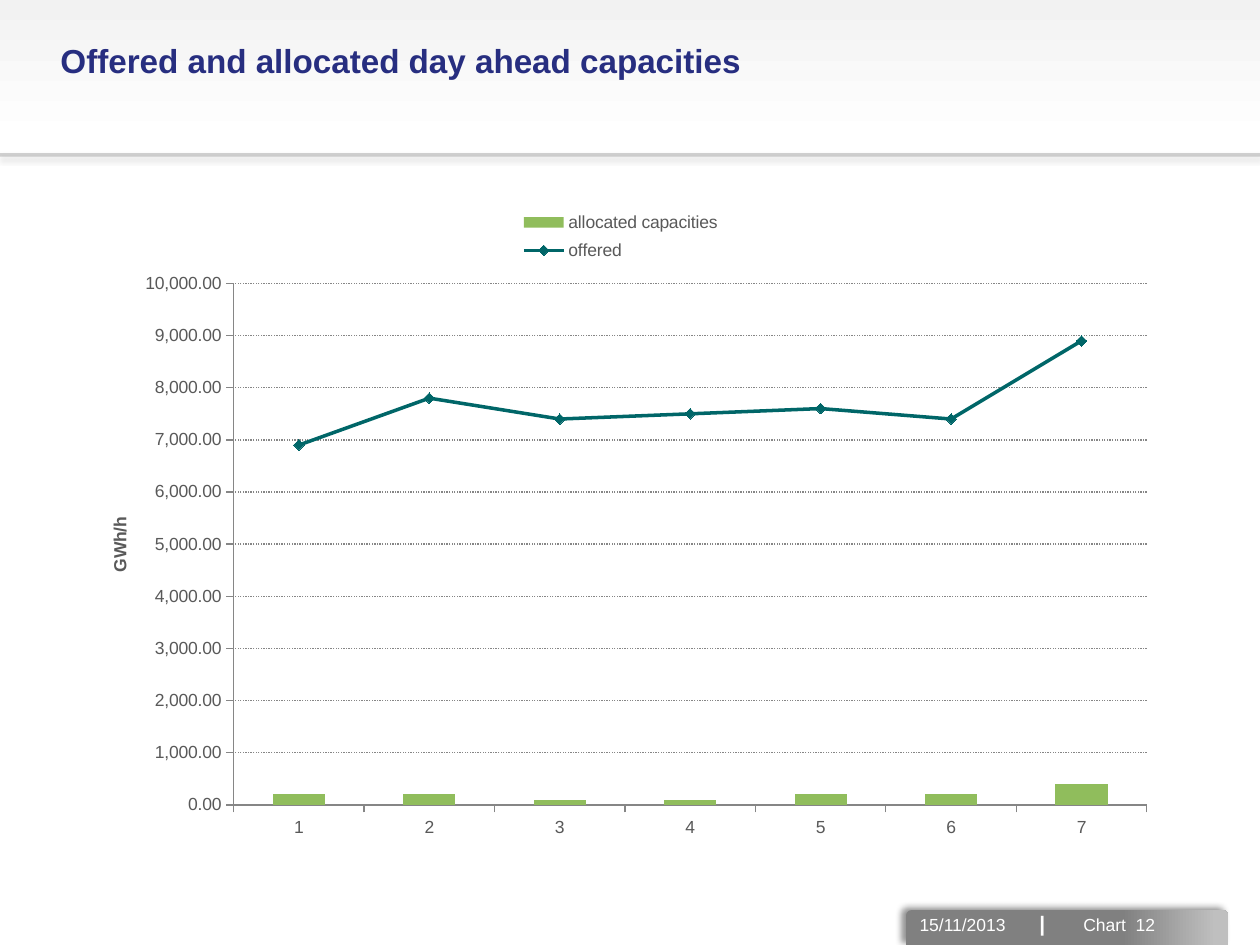
from lxml import etree
from pptx import Presentation
from pptx import util as u
from pptx.chart.data import CategoryChartData
from pptx.dml.color import RGBColor
from pptx.enum import chart as charts, dml, shapes, text
from pptx.oxml import parse_xml
from pptx.oxml.ns import nsdecls, qn

THEME = {
    "font": "Arial", "title": 19, "body": 10, "divider": 12,
    "navy": RGBColor.from_string("272E80"), "white": RGBColor.from_string("FFFFFF"),
    "pale": RGBColor.from_string("F2F2F2"), "grey": RGBColor.from_string("808080"),
    "silver": RGBColor.from_string("BFBFBF"), "text": RGBColor.from_string("595959"),
    "axis": RGBColor.from_string("868686"),
    "green": RGBColor.from_string("90BD5C"), "teal": RGBColor.from_string("006668"),
}


def set_gradient(fill, angle, *stops):
    fill.gradient()
    fill.gradient_angle = angle
    for stop, (position, color) in zip(fill.gradient_stops, stops):
        stop.position = position
        stop.color.rgb = THEME[color]


def add_shadow(shape, alpha, blur, distance, direction):
    properties = shape._element.spPr
    for old in properties.findall(qn("a:effectLst")):
        properties.remove(old)
    properties.append(parse_xml(
        f'<a:effectLst {nsdecls("a")}><a:outerShdw blurRad="{u.Pt(blur)}" dist="{u.Pt(distance)}" '
        f'dir="{direction * 60000}" algn="t" rotWithShape="0"><a:srgbClr val="000000">'
        f'<a:alpha val="{alpha * 1000}"/></a:srgbClr></a:outerShdw></a:effectLst>'))


presentation = Presentation()
presentation.slide_width, presentation.slide_height = u.Inches(10), u.Inches(7.5)
W, H = presentation.slide_width, presentation.slide_height
slide = presentation.slides.add_slide(presentation.slide_layouts[5])
set_gradient(slide.background.fill, 90, (0.85, "white"), (1, "pale"))

# Title
title = slide.shapes.title
title.left, title.top = int(W * 0.038), int(H * 0.036)
title.width, title.height = int(W * 0.801), int(H * 0.117)
title.text_frame.text = "Offered and allocated day ahead capacities"
title.text_frame.vertical_anchor = text.MSO_ANCHOR.TOP
title.text_frame.auto_size = text.MSO_AUTO_SIZE.NONE
paragraph = title.text_frame.paragraphs[0]
paragraph.alignment = text.PP_ALIGN.LEFT
font = paragraph.runs[0].font
font.name, font.size, font.bold = THEME["font"], u.Pt(THEME["title"]), True
font.color.rgb = THEME["navy"]

# Header rule
rule_y = int(H * 0.164)
rule = slide.shapes.add_connector(shapes.MSO_CONNECTOR.STRAIGHT, 0, rule_y, W, rule_y)
rule.line.width = u.Pt(2)
rule.line.color.rgb = THEME["grey"]
rule_color = rule._element.spPr.find(".//" + qn("a:srgbClr"))
etree.SubElement(rule_color, qn("a:alpha")).set("val", "34000")
add_shadow(rule, 35, 3.1, 1.8, 90)

# Footer tab
tab = slide.shapes.add_shape(shapes.MSO_SHAPE.ROUND_2_SAME_RECTANGLE,
                             int(W * 0.719), int(H * 0.963), int(W * 0.256), int(H * 0.037))
set_gradient(tab.fill, 0, (0.67, "grey"), (0.96, "silver"))
tab.line.fill.background()
add_shadow(tab, 43, 4, 3, 211)

# Footer text, spaced by tab stops
footer = slide.shapes.add_textbox(int(W * 0.72), int(H * 0.95), int(W * 0.233), int(H * 0.053))
footer.text_frame.word_wrap = True
footer.text_frame.vertical_anchor = text.MSO_ANCHOR.MIDDLE
paragraph = footer.text_frame.paragraphs[0]
tab_stops = etree.SubElement(paragraph._p.get_or_add_pPr(), qn("a:tabLst"))
for position in (0.95, 1.3):
    etree.SubElement(tab_stops, qn("a:tab"), pos=str(u.Inches(position)), algn="l")
for words, size, bold in (("15/11/2013\t", "body", False), ("|", "divider", True),
                          ("\tChart  12", "body", False)):
    run = paragraph.add_run()
    run.text = words
    run.font.name, run.font.size, run.font.bold = THEME["font"], u.Pt(THEME[size]), bold
    run.font.color.rgb = THEME["white"]

# Chart data
data = CategoryChartData(number_format="#,##0.00")
data.categories = [str(day) for day in range(1, 8)]
data.add_series("allocated capacities", (200, 200, 100, 100, 200, 200, 400))
data.add_series("offered", (6900, 7800, 7400, 7500, 7600, 7400, 8900))
chart = slide.shapes.add_chart(charts.XL_CHART_TYPE.COLUMN_CLUSTERED, int(W * 0.075), int(H * 0.216),
                               int(W * 0.87), int(H * 0.683), data).chart
chart.has_title = False
chart.font.name, chart.font.size = THEME["font"], u.Pt(THEME["body"])
chart.font.color.rgb = THEME["text"]

# Move the offered series to a line plot on the same axes
bars = chart.plots[0]
bars.gap_width, bars.vary_by_categories = 150, False
bar_chart = bars._element
offered = bar_chart.findall(qn("c:ser"))[1]
for flag in offered.findall(qn("c:invertIfNegative")):
    offered.remove(flag)
line_chart = parse_xml(f'<c:lineChart {nsdecls("c")}><c:grouping val="standard"/>'
                       '<c:varyColors val="0"/><c:marker val="1"/></c:lineChart>')
line_chart.insert(2, offered)
for axis_id in bar_chart.findall(qn("c:axId")):
    etree.SubElement(line_chart, qn("c:axId")).set("val", axis_id.get("val"))
bar_chart.addnext(line_chart)

# Series formats
allocated = bars.series[0].format.fill
allocated.solid()
allocated.fore_color.rgb = THEME["green"]
line = chart.plots[1].series[0]
line.smooth = False
line.format.line.width = u.Pt(2)
line.format.line.color.rgb = THEME["teal"]
line.marker.style, line.marker.size = charts.XL_MARKER_STYLE.DIAMOND, 6
line.marker.format.fill.solid()
line.marker.format.fill.fore_color.rgb = THEME["teal"]
line.marker.format.line.color.rgb = THEME["teal"]

# Axes
values = chart.value_axis
values.minimum_scale, values.maximum_scale, values.major_unit = 0, 10000, 1000
values.tick_labels.number_format = "#,##0.00"
values.tick_labels.number_format_is_linked = False
for axis in (chart.category_axis, values):
    axis.major_tick_mark = charts.XL_TICK_MARK.OUTSIDE
    axis.format.line.color.rgb = THEME["axis"]
values.has_major_gridlines = True
gridline = values.major_gridlines.format.line
gridline.color.rgb, gridline.width = THEME["axis"], u.Pt(0.75)
gridline.dash_style = dml.MSO_LINE.ROUND_DOT
axis_title = values.axis_title.text_frame
axis_title.text = "GWh/h"
axis_title._txBody.bodyPr.set("rot", "-5400000")
font = axis_title.paragraphs[0].runs[0].font
font.name, font.size, font.bold = THEME["font"], u.Pt(THEME["body"]), True
font.color.rgb = THEME["text"]

# Plot area, legend and axis title, as shares of the chart
chart.has_legend = True
chart.legend.position = charts.XL_LEGEND_POSITION.RIGHT
chart.legend.include_in_layout = False
for part, index, target, (x, y, width, height) in (
        (bar_chart.getparent(), 0, '<c:layoutTarget val="inner"/>', (0.127, 0.123, 0.833, 0.808)),
        (chart.legend._element, 1, "", (0.38, 0, 0.2, 0.1)),
        (values.axis_title._element, 1, "", (0.01, 0.48, 0.02, 0.09))):
    for old in part.findall(qn("c:layout")):
        part.remove(old)
    part.insert(index, parse_xml(
        f'<c:layout {nsdecls("c")}><c:manualLayout>{target}<c:xMode val="edge"/><c:yMode val="edge"/>'
        f'<c:x val="{x}"/><c:y val="{y}"/><c:w val="{width}"/><c:h val="{height}"/>'
        '</c:manualLayout></c:layout>'))

presentation.save("out.pptx")
